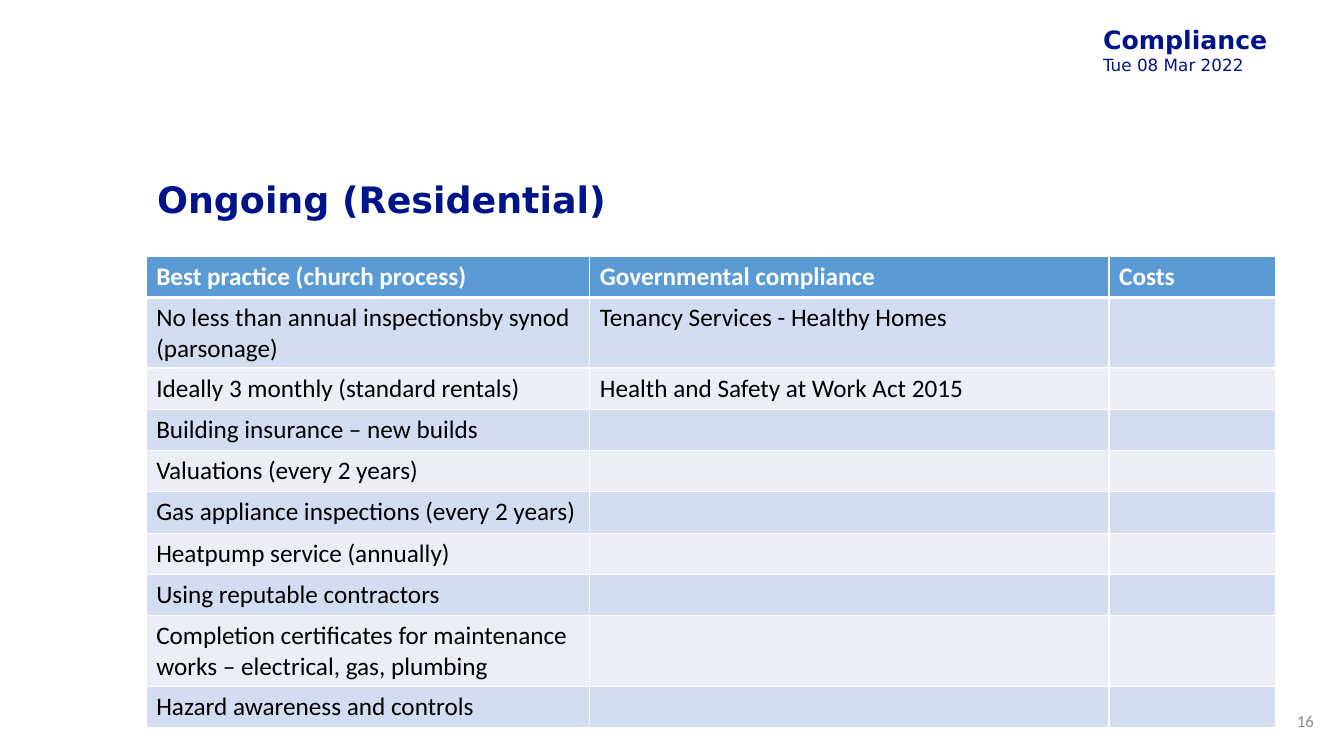
from lxml import etree
from pptx import Presentation
from pptx import util as u
from pptx.dml.color import RGBColor
from pptx.enum import text
from pptx.oxml.ns import qn

COLOURS = {
    "navy": "001489",
    "white": "FFFFFF",
    "black": "000000",
    "grey": "8C8C8C",
    "header": "5B9BD5",
    "odd": "D2DEEF",
    "even": "EAEFF7",
}
HEADING_FONT = "DejaVu Sans"
BODY_FONT = "Calibri"

COLUMN_WIDTHS = (4.4, 5.15, 1.65)
ROW_HEIGHT = 0.41
ROWS = [
    ("Best practice (church process)", "Governmental compliance", "Costs"),
    ("No less than annual inspectionsby synod (parsonage)",
     "Tenancy Services - Healthy Homes", ""),
    ("Ideally 3 monthly (standard rentals)",
     "Health and Safety at Work Act 2015", ""),
    ("Building insurance – new builds", "", ""),
    ("Valuations (every 2 years)", "", ""),
    ("Gas appliance inspections (every 2 years)", "", ""),
    ("Heatpump service (annually)", "", ""),
    ("Using reputable contractors", "", ""),
    ("Completion certificates for maintenance works – electrical, gas, plumbing",
     "", ""),
    ("Hazard awareness and controls", "", ""),
]


def rgb(name):
    return RGBColor.from_string(COLOURS[name])


def write(p, content, size=18, font=BODY_FONT, colour="black", bold=False,
          align=None, spacing=None):
    """Put formatted text in a paragraph."""
    p.alignment = align
    p.line_spacing = spacing
    if not content:
        p.font.size = u.Pt(size)
        return
    r = p.add_run()
    r.text = content
    r.font.size = u.Pt(size)
    r.font.name = font
    r.font.bold = bold
    r.font.color.rgb = rgb(colour)


def add_box(slide, left, top, width, height, wrap=True,
            anchor=text.MSO_ANCHOR.MIDDLE):
    s = slide.shapes.add_textbox(u.Inches(left), u.Inches(top),
                                 u.Inches(width), u.Inches(height))
    tf = s.text_frame
    tf.word_wrap = wrap
    tf.vertical_anchor = anchor
    return tf


def add_borders(cell, top=1, bottom=1):
    """Draw white cell borders with widths in points."""
    tc_pr = cell._tc.get_or_add_tcPr()
    for side, width in (("L", 1), ("R", 1), ("T", top), ("B", bottom)):
        ln = etree.SubElement(tc_pr, qn(f"a:ln{side}"), w=str(u.Pt(width)))
        fill = etree.SubElement(ln, qn("a:solidFill"))
        etree.SubElement(fill, qn("a:srgbClr"), val=COLOURS["white"])


def add_table(slide, left, top):
    s = slide.shapes.add_table(
        len(ROWS), len(COLUMN_WIDTHS), u.Inches(left), u.Inches(top),
        u.Inches(sum(COLUMN_WIDTHS)), u.Inches(ROW_HEIGHT * len(ROWS)))
    table = s.table
    for column, width in zip(table.columns, COLUMN_WIDTHS):
        column.width = u.Inches(width)
    for i, values in enumerate(ROWS):
        table.rows[i].height = u.Inches(ROW_HEIGHT)
        is_header = i == 0
        fill = "header" if is_header else "odd" if i % 2 else "even"
        for j, value in enumerate(values):
            cell = table.cell(i, j)
            add_borders(cell, top=3 if i == 1 else 1,
                        bottom=3 if is_header else 1)
            cell.fill.solid()
            cell.fill.fore_color.rgb = rgb(fill)
            write(cell.text_frame.paragraphs[0], value, bold=is_header,
                  colour="white" if is_header else "black")


def main():
    prs = Presentation()
    prs.slide_width = u.Inches(13.33)
    prs.slide_height = u.Inches(7.5)
    slide = prs.slides.add_slide(prs.slide_layouts[6])

    # Topic and date
    tf = add_box(slide, 10.87, 0.2, 1.79, 0.88, wrap=False,
                 anchor=text.MSO_ANCHOR.TOP)
    tf.margin_left = tf.margin_right = u.Inches(0.07)
    tf.margin_top = tf.margin_bottom = u.Inches(0.04)
    write(tf.paragraphs[0], "Compliance", font=HEADING_FONT, colour="navy",
          bold=True)
    write(tf.add_paragraph(), "Tue 08 Mar 2022", size=12, font=HEADING_FONT,
          colour="navy")

    # Title
    tf = add_box(slide, 1.46, 1.5, 11.2, 1.01)
    write(tf.paragraphs[0], "Ongoing (Residential)", size=26,
          font=HEADING_FONT, colour="navy", bold=True, spacing=0.9)

    # Compliance table
    add_table(slide, 1.45, 2.54)

    # Slide number
    tf = add_box(slide, 12.71, 6.95, 0.42, 0.4)
    write(tf.paragraphs[0], "16", size=12, colour="grey",
          align=text.PP_ALIGN.RIGHT)

    prs.save("out.pptx")


if __name__ == "__main__":
    main()
